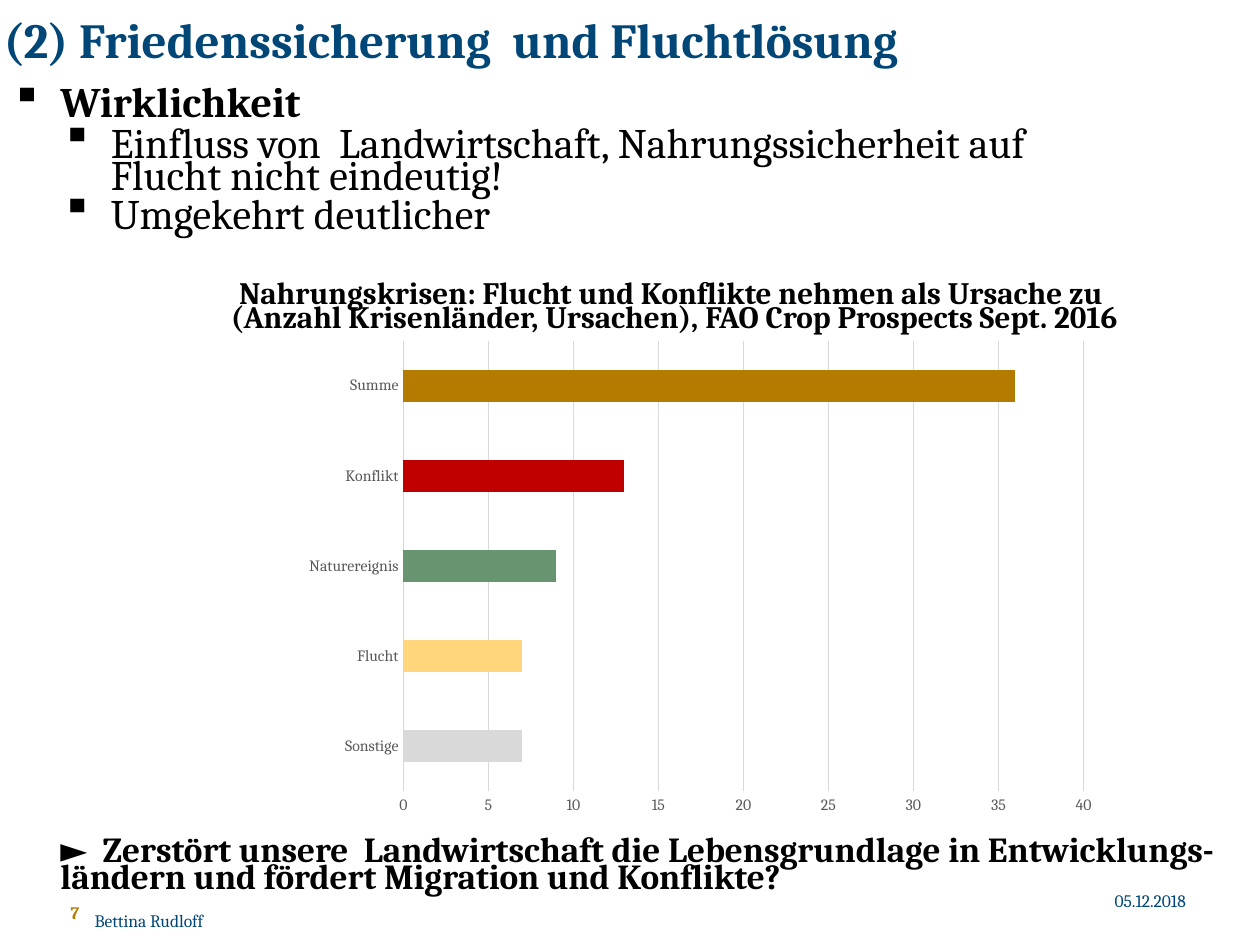
import pptx
import pptx.chart.data
import pptx.dml.color
import pptx.enum.chart
import pptx.enum.text
import pptx.oxml
import pptx.oxml.ns
import pptx.util
from pptx.util import Inches

# Content
TITLE = "(2) Friedenssicherung  und Fluchtlösung"
# text, hanging position in inches, format
POINTS = [
    ("Wirklichkeit", 0.39, dict(bold=True, spacing=0.72)),
    ("Einfluss von  Landwirtschaft, Nahrungssicherheit auf \vFlucht nicht eindeutig!",
     0.79, dict(before=5)),
    ("Umgekehrt deutlicher", 0.79, dict(before=4)),
]
CHART_TITLE = ("Nahrungskrisen: Flucht und Konflikte nehmen als Ursache zu \v"
               "(Anzahl Krisenländer, Ursachen), FAO Crop Prospects Sept. 2016")
CONCLUSION = ("►  Zerstört unsere  Landwirtschaft die Lebensgrundlage in "
              "Entwicklungs-ländern und fördert Migration und Konflikte?")
# cause, number of countries, colour key
CAUSES = [
    ("Sonstige", 7, "grey"),
    ("Flucht", 7, "yellow"),
    ("Naturereignis", 9, "green"),
    ("Konflikt", 13, "red"),
    ("Summe", 36, "gold"),
]
DATE, AUTHOR, PAGE = "05.12.2018", "Bettina Rudloff", "7"

THEME = {
    "font": "Cambria",
    "color": {"text": "000000", "blue": "004778", "gold": "B37C00", "red": "C00000",
              "green": "699470", "yellow": "FFD67B", "grey": "D9D9D9", "axis": "595959"},
    "size": {"title": 28, "body": 24, "chart_title": 17.8, "conclusion": 20.1,
             "footer": 10, "axis": 9},
}
ALIGN = pptx.enum.text.PP_ALIGN


def color(key):
    return pptx.dml.color.RGBColor.from_string(THEME["color"][key])


def style_font(font, size, key="text", bold=False):
    font.name = THEME["font"]
    font.size = pptx.util.Pt(THEME["size"][size])
    font.bold = bold
    font.color.rgb = color(key)


def add_frame(slide, left, top, width, height, anchor=pptx.enum.text.MSO_ANCHOR.TOP):
    frame = slide.shapes.add_textbox(
        Inches(left), Inches(top), Inches(width), Inches(height)).text_frame
    frame.word_wrap = True
    frame.vertical_anchor = anchor
    frame.margin_left = frame.margin_right = frame.margin_top = frame.margin_bottom = 0
    return frame


def write(paragraph, text, size="body", key="text", bold=False, align=ALIGN.LEFT,
          spacing=0.63, before=0, hang=None):
    paragraph.text = text
    paragraph.alignment = align
    paragraph.line_spacing = spacing
    paragraph.space_before = pptx.util.Pt(before)
    if hang:
        properties = paragraph._p.get_or_add_pPr()
        properties.set("marL", str(Inches(hang)))
        properties.set("indent", str(-Inches(0.39)))
        bullet = pptx.oxml.parse_xml(
            f'<a:buChar {pptx.oxml.ns.nsdecls("a")} char="▪"/>')
        properties.append(bullet)
    for run in paragraph.runs:
        style_font(run.font, size, key, bold)


def add_causes_chart(slide):
    data = pptx.chart.data.CategoryChartData()
    data.categories = [cause for cause, _, _ in CAUSES]
    data.add_series("Series 1", [count for _, count, _ in CAUSES])
    chart = slide.shapes.add_chart(
        pptx.enum.chart.XL_CHART_TYPE.BAR_CLUSTERED,
        Inches(1.87), Inches(2.41), Inches(7.01), Inches(4.21), data).chart
    chart.has_legend = chart.has_title = False
    style_font(chart.font, "footer")

    # Bars
    plot = chart.plots[0]
    plot.gap_width = 182
    plot.vary_by_categories = False
    bars = plot.series[0]
    bars.format.fill.solid()
    bars.format.fill.fore_color.rgb = color("red")
    for index, (_, _, key) in enumerate(CAUSES):
        fill = bars.points[index].format.fill
        fill.solid()
        fill.fore_color.rgb = color(key)

    # Axes
    for axis in (chart.category_axis, chart.value_axis):
        axis.major_tick_mark = axis.minor_tick_mark = pptx.enum.chart.XL_TICK_MARK.NONE
        style_font(axis.tick_labels.font, "axis", "axis")
    chart.category_axis.has_major_gridlines = False
    chart.value_axis.has_major_gridlines = True
    chart.value_axis.minimum_scale = 0
    chart.value_axis.maximum_scale = 40
    chart.value_axis.major_unit = 5
    chart.value_axis.format.line.fill.background()
    for line in (chart.category_axis.format.line,
                 chart.value_axis.major_gridlines.format.line):
        line.color.rgb = color("grey")
        line.width = pptx.util.Pt(0.75)

    # Fixed inner plot area
    plot_area = chart._chartSpace.chart.plotArea
    for old in plot_area.findall(pptx.oxml.ns.qn("c:layout")):
        plot_area.remove(old)
    places = "".join(f'<c:{name} val="{value}"/>' for name, value in
                     (("xMode", "edge"), ("yMode", "edge"),
                      ("x", 0.19), ("y", 0.07), ("w", 0.77), ("h", 0.85)))
    plot_area.insert(0, pptx.oxml.parse_xml(
        f'<c:layout {pptx.oxml.ns.nsdecls("c")}><c:manualLayout>'
        f'<c:layoutTarget val="inner"/>{places}</c:manualLayout></c:layout>'))


def main():
    deck = pptx.Presentation()
    deck.slide_width, deck.slide_height = Inches(10), Inches(7.5)
    slide = deck.slides.add_slide(deck.slide_layouts[6])

    # Title
    title = add_frame(slide, 0.03, -0.19, 8.86, 0.74, pptx.enum.text.MSO_ANCHOR.BOTTOM)
    write(title.paragraphs[0], TITLE, size="title", key="blue", bold=True, spacing=0.9)

    # Bullet points
    points = add_frame(slide, 0.09, 0.7, 9.8, 1.4)
    for index, (text, hang, form) in enumerate(POINTS):
        paragraph = points.add_paragraph() if index else points.paragraphs[0]
        write(paragraph, text, hang=hang, **form)

    # Chart with heading, then conclusion
    add_causes_chart(slide)
    heading = add_frame(slide, 0.85, 2.27, 9, 0.45)
    write(heading.paragraphs[0], CHART_TITLE, size="chart_title", bold=True,
          align=ALIGN.CENTER)
    conclusion = add_frame(slide, 0.48, 6.68, 9.5, 0.5)
    write(conclusion.paragraphs[0], CONCLUSION, size="conclusion", bold=True)

    # Footer
    for text, left, top, width, form in (
            (DATE, 5.24, 7.06, 4.17, dict(key="blue", align=ALIGN.RIGHT)),
            (AUTHOR, 0.75, 7.22, 6.38, dict(key="blue")),
            (PAGE, 0, 7.16, 0.63, dict(key="gold", bold=True, align=ALIGN.RIGHT))):
        footer = add_frame(slide, left, top, width, 0.28)
        write(footer.paragraphs[0], text, size="footer", spacing=1.0, **form)

    deck.save("out.pptx")


if __name__ == "__main__":
    main()
